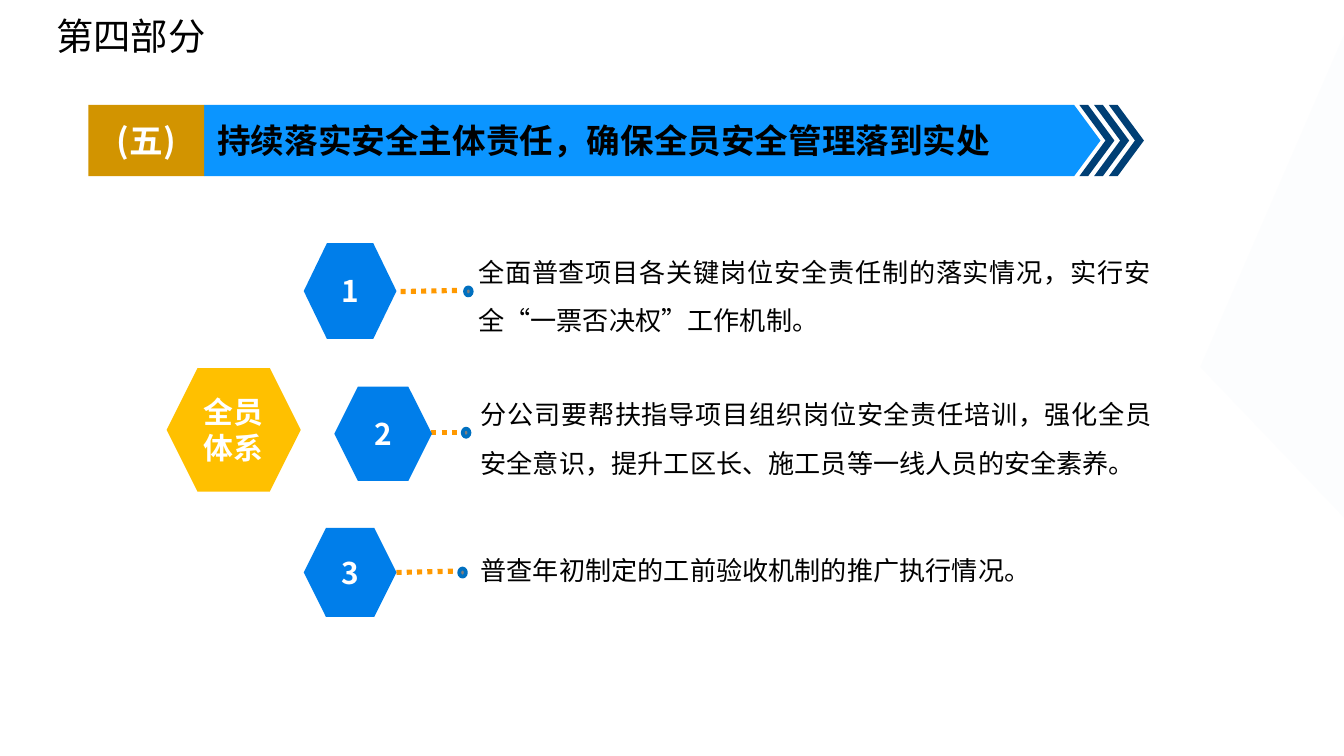
import pptx
import pptx.dml.color
import pptx.enum.dml
import pptx.enum.shapes
import pptx.enum.text
import pptx.oxml.ns
import pptx.util
from dataclasses import dataclass
from lxml import etree

Pt = pptx.util.Pt
SHAPES = pptx.enum.shapes.MSO_SHAPE
ALIGN = pptx.enum.text.PP_ALIGN
MIDDLE = pptx.enum.text.MSO_ANCHOR.MIDDLE
qn = pptx.oxml.ns.qn


@dataclass(frozen=True)
class Theme:
    font: str = "Noto Sans CJK SC"
    heading_font: str = "Noto Sans CJK JP"
    black: str = "000000"
    white: str = "FFFFFF"
    banner: str = "0B95FF"
    banner_number: str = "D29400"
    chevron: str = "003F75"
    hub: str = "FFC000"
    step: str = "007EEA"
    dotted_line: str = "FF9900"
    dot: str = "7F7F7F"
    dot_outline: str = "0070C0"
    backdrop: str = "EAEFF6"
    heading_size: int = 20
    banner_size: int = 18
    step_size: int = 16
    body_size: int = 14


def color(value):
    return pptx.dml.color.RGBColor.from_string(value)


def write_text(shape, text, *, size, font, ink, bold=False, align=ALIGN.LEFT,
               line_spacing=None, anchor=None, wrap=True):
    frame = shape.text_frame
    frame.word_wrap = wrap
    if anchor is not None:
        frame.vertical_anchor = anchor
    paragraph = frame.paragraphs[0]
    paragraph.alignment = align
    if line_spacing:
        paragraph.line_spacing = Pt(line_spacing)
    run = paragraph.add_run()
    run.text = text
    run.font.size = Pt(size)
    run.font.bold = bold
    run.font.name = font
    run.font.color.rgb = color(ink)
    # East Asian typeface
    properties = run._r.get_or_add_rPr()
    properties.find(qn("a:latin")).addnext(
        properties.makeelement(qn("a:ea"), {"typeface": font}))


class SlideBuilder:
    def __init__(self, slide, theme):
        self.slide = slide
        self.theme = theme

    def paint(self, shape, fill, outline=None, width=2):
        shape.shadow.inherit = False
        shape.fill.solid()
        shape.fill.fore_color.rgb = color(fill)
        if outline:
            shape.line.color.rgb = color(outline)
            shape.line.width = Pt(width)
        else:
            shape.line.fill.background()
        return shape

    def shape(self, kind, box, fill, outline=None, adjustment=None):
        shape = self.slide.shapes.add_shape(kind, *map(Pt, box))
        if adjustment is not None:
            shape.adjustments[0] = adjustment
        return self.paint(shape, fill, outline)

    def label(self, kind, box, fill, text, size, ink=None, align=ALIGN.CENTER,
              adjustment=None):
        shape = self.shape(kind, box, fill, adjustment=adjustment)
        write_text(shape, text, size=size, font=self.theme.font,
                   ink=ink or self.theme.white, bold=True, align=align,
                   anchor=MIDDLE)

    def hexagon(self, box, fill, text):
        self.label(SHAPES.HEXAGON, box, fill, text, self.theme.step_size,
                   adjustment=0.25)

    def outline(self, contours, fill, opacity=None):
        builder = None
        for contour in contours:
            start, *rest = [(Pt(x), Pt(y)) for x, y in contour]
            if builder is None:
                builder = self.slide.shapes.build_freeform(*start, scale=1.0)
            else:
                builder.move_to(*start)
            builder.add_line_segments(rest, close=True)
        shape = self.paint(builder.convert_to_shape(), fill)
        if opacity is not None:
            tint = shape._element.spPr.find(qn("a:solidFill"))[0]
            etree.SubElement(tint, qn("a:alpha"), val=str(opacity * 1000))

    def dotted_line(self, start, end):
        connector = self.slide.shapes.add_connector(
            pptx.enum.shapes.MSO_CONNECTOR.STRAIGHT, *map(Pt, start + end))
        connector.line.color.rgb = color(self.theme.dotted_line)
        connector.line.width = Pt(2.75)
        connector.line.dash_style = pptx.enum.dml.MSO_LINE.ROUND_DOT
        etree.SubElement(connector._element.spPr, qn("a:effectLst"))

    def text(self, box, text, **style):
        text_box = self.slide.shapes.add_textbox(*map(Pt, box))
        write_text(text_box, text, ink=self.theme.black, **style)


def main():
    presentation = pptx.Presentation()
    presentation.slide_width = Pt(720)
    presentation.slide_height = Pt(405)
    theme = Theme()
    slide = presentation.slides.add_slide(presentation.slide_layouts[6])
    builder = SlideBuilder(slide, theme)

    # Backdrop and heading
    builder.outline([[(720, 18.7), (720, 277.2), (643, 196.6)]],
                    theme.backdrop, opacity=10)
    builder.text((23, 0, 99.4, 38), "第四部分", size=theme.heading_size,
                 font=theme.heading_font, anchor=MIDDLE, wrap=False)

    # Banner with three chevrons
    top, height = 56.2, 38.2
    middle, bottom = top + height / 2, top + height
    chevrons = []
    for index in range(3):
        left = 578.2 + 7.9 * index
        chevrons.append([(left, top), (left + 4.7, top), (left + 18.8, middle),
                         (left + 4.7, bottom), (left, bottom),
                         (left + 14, middle)])
    builder.outline(chevrons, theme.chevron)
    builder.label(SHAPES.PENTAGON, (109.4, top, 480.2, height), theme.banner,
                  "持续落实安全主体责任，确保全员安全管理落到实处",
                  theme.banner_size, ink=theme.black, align=ALIGN.LEFT,
                  adjustment=0.37)
    builder.label(SHAPES.RECTANGLE, (47.4, top, 62, height),
                  theme.banner_number, "(五)", theme.banner_size)

    # Hub
    builder.hexagon((89.3, 197.2, 71.8, 66.2), theme.hub, "全员体系")

    # Steps: hexagon, line start and end, dot corner, text box, alignment, text
    steps = [
        ((162.7, 130.3, 49.7, 51.3), (214.6, 156.2), (244.8, 155.6),
         (249.1, 154), (249.1, 124.6, 374.4, 59.8), ALIGN.JUSTIFY,
         "全面普查项目各关键岗位安全责任制的落实情况，实行安全“一票否决权”工作机制。"),
        ((179.1, 207.1, 52.3, 50.6), (214.6, 231.8), (244.8, 231.8),
         (247.9, 229.7), (250.4, 200.9, 373.7, 59.8), ALIGN.JUSTIFY,
         "分公司要帮扶指导项目组织岗位安全责任培训，强化全员安全意识，"
         "提升工区长、施工员等一线人员的安全素养。"),
        ((162.7, 282.8, 49.7, 47.7), (212.4, 306.7), (242.6, 306),
         (246, 304.6), (250.4, 284.4, 396.7, 33.8), ALIGN.LEFT,
         "普查年初制定的工前验收机制的推广执行情况。"),
    ]
    for number, step in enumerate(steps, start=1):
        hexagon, start, end, dot, text_box, align, text = step
        builder.dotted_line(start, end)
        builder.hexagon(hexagon, theme.step, str(number))
        builder.shape(SHAPES.OVAL, (*dot, 3.6, 4.3), theme.dot,
                      outline=theme.dot_outline)
        builder.text(text_box, text, size=theme.body_size, font=theme.font,
                     align=align, line_spacing=26)

    presentation.save("out.pptx")


if __name__ == "__main__":
    main()
